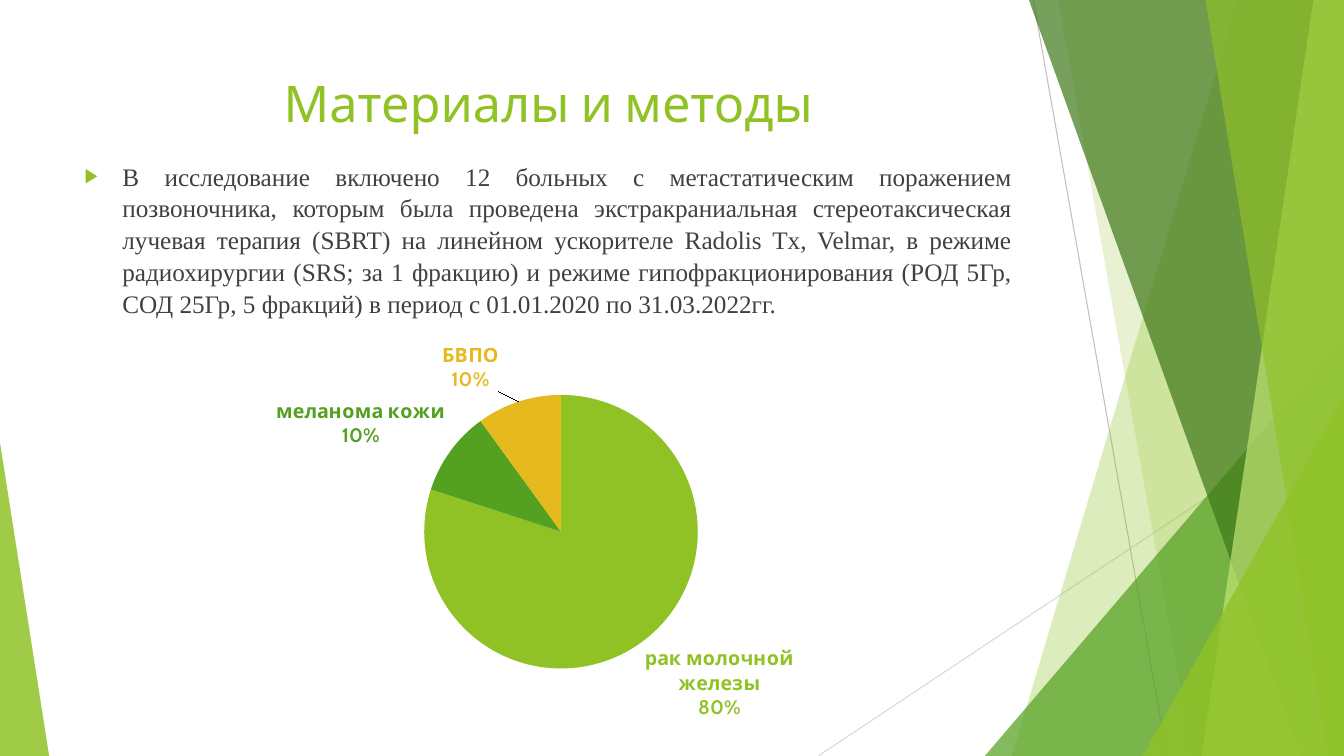
from dataclasses import dataclass

from lxml.etree import SubElement
from pptx import Presentation
from pptx.chart.data import CategoryChartData
from pptx.dml.color import RGBColor
from pptx.enum.chart import XL_CHART_TYPE, XL_LABEL_POSITION
from pptx.enum.shapes import MSO_CONNECTOR, MSO_SHAPE
from pptx.enum.text import MSO_ANCHOR, MSO_AUTO_SIZE, PP_ALIGN
from pptx.oxml import parse_xml
from pptx.oxml.ns import nsdecls, qn
from pptx.util import Cm, Pt

LIME = RGBColor(0x90, 0xC2, 0x26)
GREEN = RGBColor(0x54, 0xA0, 0x21)
DARK_GREEN = RGBColor(0x3F, 0x78, 0x19)
PALE_LIME = RGBColor(0xC0, 0xE4, 0x74)
GOLD = RGBColor(0xE6, 0xB9, 0x1E)
TEXT_GREY = RGBColor(0x40, 0x40, 0x40)
LINE_GREY = RGBColor(0xBF, 0xBF, 0xBF)
LIGHT_GREY = RGBColor(0xD9, 0xD9, 0xD9)

HEADING_FONT = "Cabin"
BODY_FONT = "Times New Roman"

TITLE = "Материалы и методы"
BODY = (
    "В исследование включено 12 больных c метастатическим поражением "
    "позвоночника, которым была проведена экстракраниальная стереотаксическая "
    "лучевая терапия (SBRT) на линейном ускорителе Radolis Tx, Velmar, в режиме "
    "радиохирургии (SRS; за 1 фракцию) и режиме гипофракционирования (РОД 5Гр, "
    "СОД 25Гр, 5 фракций) в период с 01.01.2020 по 31.03.2022гг."
)
DIAGNOSES = [
    ("рак молочной железы", 80, LIME),
    ("меланома кожи", 10, GREEN),
    ("БВПО", 10, GOLD),
]


@dataclass
class Box:
    """A region of the slide, in centimetres."""

    left: float
    top: float
    width: float
    height: float

    def lengths(self):
        """Return the four sides as slide lengths."""
        return Cm(self.left), Cm(self.top), Cm(self.width), Cm(self.height)


SLIDE = Box(0, 0, 33.87, 19.05)


def paint(shape, color, opacity):
    """Fill a shape with a translucent colour and no outline."""
    shape.shadow.inherit = False
    shape.fill.solid()
    shape.fill.fore_color.rgb = color
    tint = shape.element.xpath("./p:spPr/a:solidFill/a:srgbClr")[0]
    SubElement(tint, qn("a:alpha")).set("val", str(opacity * 1000))
    shape.line.fill.background()


def add_ray(page, start, end, color):
    """Draw one thin line between two points."""
    ray = page.shapes.add_connector(
        MSO_CONNECTOR.STRAIGHT, *(Cm(value) for value in start + end)
    )
    ray.line.color.rgb = color
    ray.line.width = Pt(0.75)
    SubElement(ray.element.spPr, qn("a:effectLst"))


def add_band(page, box, upper, lower, color, opacity):
    """Draw a slanted band that reaches the right edge of the box."""
    right, bottom = box.left + box.width, box.top + box.height
    corners = [(right, box.top), (right, bottom), (box.left + lower, bottom)]
    builder = page.shapes.build_freeform(Cm(box.left + upper), Cm(box.top))
    builder.add_line_segments([(Cm(x), Cm(y)) for x, y in corners], close=True)
    paint(builder.convert_to_shape(), color, opacity)


def add_wedge(page, box, apex, color, opacity):
    """Draw a right triangle with its apex at the given share of the width."""
    wedge = page.shapes.add_shape(MSO_SHAPE.ISOSCELES_TRIANGLE, *box.lengths())
    wedge.adjustments[0] = apex
    paint(wedge, color, opacity)


def add_decoration(page, box):
    """Lay the rays, bands and wedges along the edges of the box."""

    def corner(left, top):
        """Return the bottom right corner of the box from a given point."""
        return Box(box.left + left, box.top + top, box.width - left, box.height - top)

    bottom, right = box.top + box.height, box.left + box.width
    add_ray(page, (box.left + 26.04, box.top), (box.left + 29.41, bottom), LINE_GREY)
    add_ray(page, (right, box.top + 10.24), (box.left + 20.62, bottom), LIGHT_GREY)
    add_band(page, box, 31.19, 25.5, LIME, 30)
    add_band(page, box, 26.67, 30.05, LIME, 20)
    add_wedge(page, corner(24.82, 8.46), 1, GREEN, 72)
    add_band(page, box, 25.93, 32.79, DARK_GREEN, 70)
    add_band(page, box, 33.1, 30.28, PALE_LIME, 70)
    add_band(page, box, 30.38, 33.48, LIME, 65)
    add_wedge(page, corner(28.8, 9.98), 1, LIME, 80)
    add_wedge(page, Box(box.left, box.top + 11.15, 1.24, 7.9), 0, LIME, 85)


def fill_placeholder(holder, box, text, align, font, size, color):
    """Place a placeholder in its box, bring it forward and set its text."""
    holder.left, holder.top, holder.width, holder.height = box.lengths()
    holder.element.getparent().append(holder.element)
    frame = holder.text_frame
    frame.text = text
    frame.word_wrap = True
    frame.auto_size = MSO_AUTO_SIZE.NONE
    frame.vertical_anchor = MSO_ANCHOR.TOP
    para = frame.paragraphs[0]
    para.alignment = align
    span = para.runs[0]
    span.font.name = font
    span.font.size = Pt(size)
    span.font.color.rgb = color
    return para


def add_title(page, box):
    """Set the centred slide title."""
    fill_placeholder(
        page.shapes.title, box, TITLE, PP_ALIGN.CENTER, HEADING_FONT, 36, LIME
    )


def add_body(page, box):
    """Set the justified paragraph with its arrow bullet."""
    para = fill_placeholder(
        page.placeholders[1], box, BODY, PP_ALIGN.JUSTIFY, BODY_FONT, 18, TEXT_GREY
    )
    para.line_spacing = 1.05
    para.space_before = Pt(10)
    properties = para._p.get_or_add_pPr()
    properties.set("marL", str(Cm(0.95)))
    properties.set("indent", str(Cm(-0.95)))
    tint = SubElement(properties, qn("a:buClr"))
    SubElement(tint, qn("a:srgbClr")).set("val", str(LIME))
    SubElement(properties, qn("a:buSzPct")).set("val", "80000")
    SubElement(properties, qn("a:buChar")).set("char", "▶")


def manual_layout(**settings):
    """Build a chart layout element from its named settings."""
    parts = "".join(f'<c:{name} val="{value}"/>' for name, value in settings.items())
    return parse_xml(
        f'<c:layout {nsdecls("c")}><c:manualLayout>{parts}</c:manualLayout></c:layout>'
    )


def add_diagnosis_chart(page, box):
    """Draw the pie of diagnoses with a coloured label for each slice."""
    data = CategoryChartData()
    data.categories = [name for name, share, color in DIAGNOSES]
    data.add_series("Series 1", [share for name, share, color in DIAGNOSES])
    chart = page.shapes.add_chart(XL_CHART_TYPE.PIE, *box.lengths(), data).chart
    chart.has_title = False
    chart.has_legend = False
    chart.font.name = HEADING_FONT
    chart.font.size = Pt(10)
    chart.plots[0].vary_by_categories = True
    series = chart.plots[0].series[0]
    labels = series.data_labels
    labels.show_value = False
    labels.show_category_name = labels.show_percentage = True
    labels.position = XL_LABEL_POSITION.OUTSIDE_END
    for index, (name, share, color) in enumerate(DIAGNOSES):
        point = series.points[index]
        point.format.fill.solid()
        point.format.fill.fore_color.rgb = color
        point.format.line.fill.background()
        label = point.data_label
        label.font.name = HEADING_FONT
        label.font.size = Pt(14)
        label.font.bold = True
        label.font.color.rgb = color
        label.position = XL_LABEL_POSITION.OUTSIDE_END
    flags = {"showVal": "0", "showCatName": "1", "showPercent": "1"}
    for label in chart.element.xpath(".//c:dLbl"):
        for flag, value in flags.items():
            label.find(qn("c:" + flag)).set("val", value)
        SubElement(label, qn("c:separator")).text = "\n"
    label.insert(1, manual_layout(x=-0.02, y=-0.01))
    area = chart.element.xpath(".//c:plotArea")[0]
    for layout in area.findall(qn("c:layout")):
        area.remove(layout)
    area.insert(0, manual_layout(
        layoutTarget="inner", xMode="edge", yMode="edge", x=0.37, y=0.15, w=0.31, h=0.67
    ))


def main():
    """Build the slide and save the deck."""
    deck = Presentation()
    deck.slide_width, deck.slide_height = Cm(SLIDE.width), Cm(SLIDE.height)
    page = deck.slides.add_slide(deck.slide_layouts[1])
    add_decoration(page, SLIDE)
    add_title(page, Box(1.88, 1.7, 23.88, 3.66))
    add_body(page, Box(1.88, 3.89, 23.88, 4.52))
    add_diagnosis_chart(page, Box(2.18, 8.41, 22.78, 10.29))
    deck.save("out.pptx")


if __name__ == "__main__":
    main()
